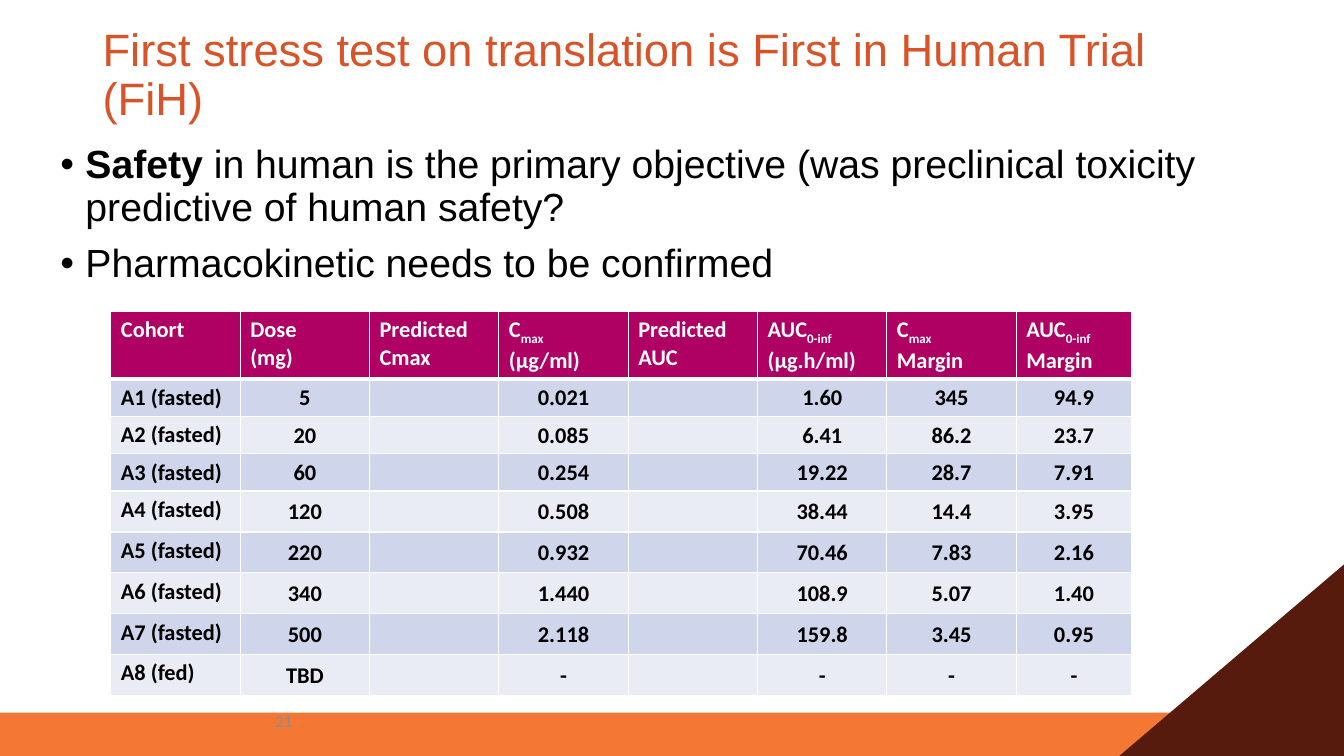
from lxml.etree import SubElement
from pptx import Presentation
from pptx.dml.color import RGBColor
from pptx.enum.shapes import MSO_SHAPE
from pptx.enum.text import MSO_ANCHOR, PP_ALIGN
from pptx.oxml import parse_xml
from pptx.oxml.ns import nsdecls, qn
from pptx.util import Pt

HEADERS = [  # paragraphs of each cell; every second part between bars is subscript
    ["Cohort"], ["Dose", "(mg)"], ["Predicted Cmax"], ["C|max", "(μg/ml)"],
    ["Predicted AUC"], ["AUC|0-inf |(μg.h/ml)"], ["C|max", "Margin"], ["AUC|0-inf", "Margin"],
]
COHORTS = [
    ("A1 (fasted)", "5", "", "0.021", "", "1.60", "345", "94.9"),
    ("A2 (fasted)", "20", "", "0.085", "", "6.41", "86.2", "23.7"),
    ("A3 (fasted)", "60", "", "0.254", "", "19.22", "28.7", "7.91"),
    ("A4 (fasted)", "120", "", "0.508", "", "38.44", "14.4", "3.95"),
    ("A5 (fasted)", "220", "", "0.932", "", "70.46", "7.83", "2.16"),
    ("A6 (fasted)", "340", "", "1.440", "", "108.9", "5.07", "1.40"),
    ("A7 (fasted)", "500", "", "2.118", "", "159.8", "3.45", "0.95"),
    ("A8 (fed)", "TBD", "", "-", "", "-", "-", "-"),
]
COLUMN_WIDTHS = [92.4] * 7 + [82.5]
ROW_HEIGHTS = [45.2] + [26.7] * 3 + [29.2] * 5


def color(value):
    return RGBColor.from_string(value)


class TrialSlide:
    heading_font, table_font = "Arial", "Calibri"
    black, white, grey = "000000", "FFFFFF", "8C8C8C"
    orange, brown, rust, magenta = "F47734", "561B0D", "D85327", "AF0064"
    bands = ("CFD5EA", "E9EBF5")

    def __init__(self, page):
        self.page = page

    def shape(self, kind, frame, fill):
        shape = self.page.shapes.add_shape(kind, *map(Pt, frame))
        shape.shadow.inherit = False
        shape.fill.solid()
        shape.fill.fore_color.rgb = color(fill)
        shape.line.fill.background()
        return shape

    def box(self, frame, anchor):
        box = self.page.shapes.add_textbox(*map(Pt, frame))
        box.text_frame.word_wrap = True
        box.text_frame.vertical_anchor = anchor
        return box.text_frame

    def span(self, para, text, size, font, fill, bold=False):
        span = para.add_run()
        span.text = text
        span.font.size = Pt(size)
        span.font.name = font
        span.font.bold = bold
        span.font.color.rgb = color(fill)
        return span

    def title(self, text, frame):
        para = self.box(frame, MSO_ANCHOR.MIDDLE).paragraphs[0]
        para.line_spacing = 0.9
        self.span(para, text, 32.4, self.heading_font, self.rust)

    def bullets(self, items, frame):
        text_frame = self.box(frame, MSO_ANCHOR.TOP)
        for index, spans in enumerate(items):
            para = text_frame.add_paragraph() if index else text_frame.paragraphs[0]
            properties = para._p.get_or_add_pPr()
            properties.set("marL", str(Pt(18)))
            properties.set("indent", str(-Pt(18)))
            SubElement(properties, qn("a:buFont"), typeface=self.heading_font)
            SubElement(properties, qn("a:buChar"), char="•")
            para.line_spacing = 0.9
            if index:
                para.space_before = Pt(10)
            for text, bold in spans:
                self.span(para, text, 28, self.heading_font, self.black, bold)

    def page_number(self, text, frame):
        para = self.box(frame, MSO_ANCHOR.MIDDLE).paragraphs[0]
        para.alignment = PP_ALIGN.RIGHT
        self.span(para, text, 12, self.table_font, self.grey)

    def borders(self, cell, top, bottom):
        properties = cell._tc.get_or_add_tcPr()
        for index, (side, width) in enumerate(zip("LRTB", (1, 1, top, bottom))):
            properties.insert(index, parse_xml(
                f'<a:ln{side} {nsdecls("a")} w="{Pt(width)}"><a:solidFill>'
                f'<a:srgbClr val="{self.white}"/></a:solidFill></a:ln{side}>'))

    def cell(self, cell, paragraphs, fill, ink, centered):
        cell.fill.solid()
        cell.fill.fore_color.rgb = color(fill)
        if centered:
            cell.vertical_anchor = MSO_ANCHOR.MIDDLE
            cell.margin_left = cell.margin_right = cell.margin_top = Pt(0.7)
            cell.margin_bottom = 0
        for index, text in enumerate(paragraphs):
            para = cell.text_frame.add_paragraph() if index else cell.text_frame.paragraphs[0]
            if centered:
                para.alignment = PP_ALIGN.CENTER
            if not text:
                SubElement(para._p, qn("a:endParaRPr"), sz="1600")
                continue
            for position, part in enumerate(text.split("|")):
                span = self.span(para, part, 16, self.table_font, ink, True)
                if position % 2:
                    span.font._element.set("baseline", "-25000")

    def table(self, left, top):
        table = self.page.shapes.add_table(
            len(ROW_HEIGHTS), len(COLUMN_WIDTHS), Pt(left), Pt(top),
            Pt(sum(COLUMN_WIDTHS)), Pt(sum(ROW_HEIGHTS))).table
        for column, width in zip(table.columns, COLUMN_WIDTHS):
            column.width = Pt(width)
        for row, height in zip(table.rows, ROW_HEIGHTS):
            row.height = Pt(height)
        for column, paragraphs in enumerate(HEADERS):
            cell = table.cell(0, column)
            self.cell(cell, paragraphs, self.magenta, self.white, False)
            self.borders(cell, 1, 3)
        for row, values in enumerate(COHORTS, 1):
            for column, value in enumerate(values):
                cell = table.cell(row, column)
                self.cell(cell, [value], self.bands[(row - 1) % 2], self.black, column > 0)
                self.borders(cell, 3 if row == 1 else 1, 1)


def main():
    deck = Presentation()
    deck.slide_width, deck.slide_height = Pt(960), Pt(540)
    slide = TrialSlide(deck.slides.add_slide(deck.slide_layouts[6]))

    # Footer band and corner
    slide.shape(MSO_SHAPE.RECTANGLE, (0, 509, 958.5, 31), slide.orange)
    corner = slide.shape(MSO_SHAPE.ISOSCELES_TRIANGLE, (799.5, 403.2, 160.5, 136.8), slide.brown)
    corner.adjustments[0] = 1

    # Heading and key points
    slide.title("First stress test on translation is First in Human Trial (FiH)",
                (66.2, 28.8, 840.2, 51.1))
    slide.bullets([
        [("Safety", True),
         (" in human is the primary objective (was preclinical toxicity "
          "predictive of human safety?", False)],
        [("Pharmacokinetic needs to be confirmed", False)],
    ], (36, 100, 900, 392.4))
    slide.page_number("21", (0, 500.4, 216, 28.8))

    # Cohort results
    slide.table(79.2, 222.5)

    deck.save("out.pptx")


if __name__ == "__main__":
    main()
